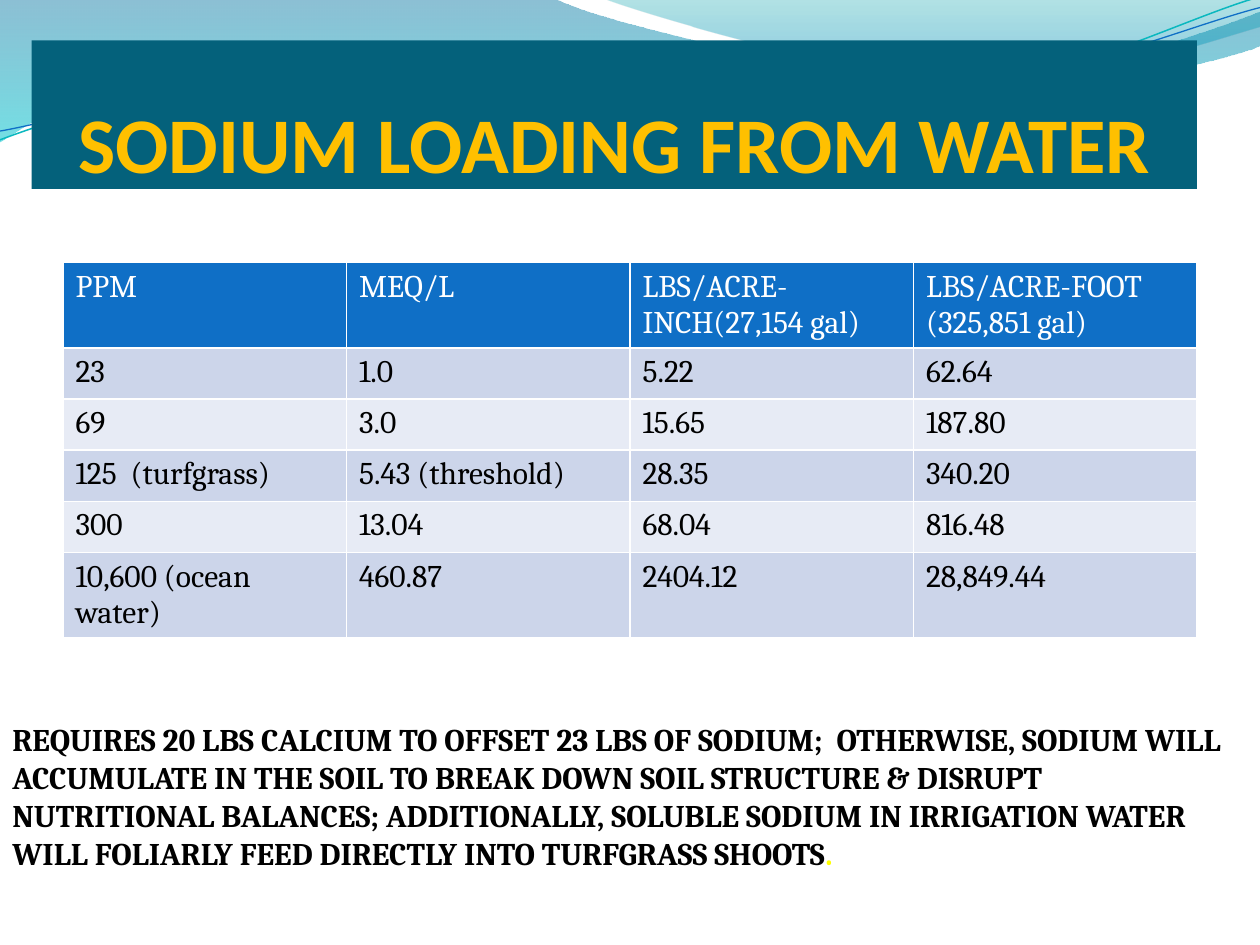
import math

import lxml.etree
import pptx
import pptx.dml.color
import pptx.enum.shapes
import pptx.enum.text
import pptx.oxml.ns
import pptx.util

RGBColor = pptx.dml.color.RGBColor
WHITE = RGBColor(255, 255, 255)
BLACK = RGBColor(0, 0, 0)
TEAL = RGBColor(0x04, 0x61, 0x7B)
GOLD = RGBColor(0xFF, 0xC0, 0x00)
YELLOW = RGBColor(0xFF, 0xFF, 0x00)
BLUE = RGBColor(0x0F, 0x6F, 0xC6)
AQUA = RGBColor(0x0A, 0xB8, 0xBF)
BAND_DARK = RGBColor(0xCC, 0xD5, 0xEA)
BAND_LIGHT = RGBColor(0xE7, 0xEB, 0xF5)
DEEP_BLUE = RGBColor(0x00, 0x74, 0xA1)
CYAN = RGBColor(0x00, 0xC6, 0xCF)
SEA_GREEN = RGBColor(0x00, 0xA1, 0xA9)
SEA_BLUE = RGBColor(0x00, 0x8B, 0xBF)

COLUMNS, ROWS = 100, 75
STRAND_TILT = 2.7

LOADING = [
    ["PPM", "MEQ/L", "LBS/ACRE-INCH(27,154 gal)", "LBS/ACRE-FOOT (325,851 gal)"],
    ["23", "1.0", "5.22", "62.64"],
    ["69", "3.0", "15.65", "187.80"],
    ["125  (turfgrass)", "5.43 (threshold)", "28.35", "340.20"],
    ["300", "13.04", "68.04", "816.48"],
    ["10,600 (ocean water)", "460.87", "2404.12", "28,849.44"],
]
ADVICE = (
    "REQUIRES 20 LBS CALCIUM TO OFFSET 23 LBS OF SODIUM;  OTHERWISE, SODIUM WILL "
    "ACCUMULATE IN THE SOIL TO BREAK DOWN SOIL STRUCTURE & DISRUPT NUTRITIONAL "
    "BALANCES; ADDITIONALLY, SOLUBLE SODIUM IN IRRIGATION WATER WILL FOLIARLY "
    "FEED DIRECTLY INTO TURFGRASS SHOOTS"
)


def turn(point, pivot, degrees):
    angle = math.radians(degrees)
    dx, dy = point[0] - pivot[0], point[1] - pivot[1]
    return (pivot[0] + dx * math.cos(angle) - dy * math.sin(angle),
            pivot[1] + dx * math.sin(angle) + dy * math.cos(angle))


class Deck:
    def __init__(self):
        self.prs = pptx.Presentation()
        self.prs.slide_width = pptx.util.Inches(10)
        self.prs.slide_height = pptx.util.Inches(7.5)
        self.s = self.prs.slides.add_slide(self.prs.slide_layouts[6])
        self.heading_font, self.body_font = "Calibri", "Cambria"

    def x(self, columns):
        return round(self.prs.slide_width * columns / COLUMNS)

    def y(self, rows):
        return round(self.prs.slide_height * rows / ROWS)

    def box(self, left, top, width, height):
        return self.x(left), self.y(top), self.x(width), self.y(height)

    def style(self, r, font, size, color, bold=False):
        r.font.name, r.font.size, r.font.bold = font, pptx.util.Pt(size), bold
        r.font.color.rgb = color

    def curve(self, segments, closed, pivot=(0, 0), tilt=0):
        points = [turn(pair, pivot, tilt)
                  for segment in segments for pair in zip(segment[::2], segment[1::2])]
        points = [(self.x(px), self.y(py)) for px, py in points]
        builder = self.s.shapes.build_freeform(*points[0])
        builder.add_line_segments(points[1:], close=closed)
        sp = builder.convert_to_shape()
        sp.shadow.inherit = False
        sp.rotation = -tilt
        steps = iter(list(sp._element.iter(pptx.oxml.ns.qn("a:lnTo"))))
        for segment in segments[1:]:
            step = next(steps)
            if len(segment) == 6:
                bezier = lxml.etree.Element(pptx.oxml.ns.qn("a:cubicBezTo"))
                step.addprevious(bezier)
                for part in (step, next(steps), next(steps)):
                    bezier.append(part[0])
                    part.getparent().remove(part)
        return sp

    def wave(self, segments, stops):
        sp = self.curve(segments, True)
        sp.line.fill.background()
        sp.fill.gradient()
        sp.fill.gradient_angle = 270
        for stop, (position, color, _) in zip(sp.fill.gradient_stops, stops):
            stop.position, stop.color.rgb = position, color
        colors = sp._element.spPr.iter(pptx.oxml.ns.qn("a:srgbClr"))
        for node, (_, _, opacity) in zip(colors, stops):
            alpha = lxml.etree.SubElement(node, pptx.oxml.ns.qn("a:alpha"))
            alpha.set("val", str(opacity * 1000))

    def strand(self, segments, pivot, color, width):
        sp = self.curve(segments, False, pivot, STRAND_TILT)
        sp.fill.background()
        sp.line.color.rgb = color
        sp.line.width = pptx.util.Pt(width)

    def banner(self, text, *place):
        sp = self.s.shapes.add_shape(pptx.enum.shapes.MSO_SHAPE.RECTANGLE, *self.box(*place))
        sp.shadow.inherit = False
        sp.fill.solid()
        sp.fill.fore_color.rgb = TEAL
        sp.line.fill.background()
        tf = sp.text_frame
        tf.text = text
        tf.word_wrap = True
        tf.vertical_anchor = pptx.enum.text.MSO_ANCHOR.BOTTOM
        tf.margin_left = tf.margin_right = tf.margin_bottom = 0
        p = tf.paragraphs[0]
        p.alignment = pptx.enum.text.PP_ALIGN.CENTER
        self.style(p.runs[0], self.heading_font, 45, GOLD, True)

    def table(self, rows, row_height, *place):
        frame = self.s.shapes.add_table(len(rows), len(rows[0]), *self.box(*place))
        for i, values in enumerate(rows):
            frame.table.rows[i].height = self.y(row_height)
            header = i == 0
            fill = BLUE if header else BAND_DARK if i % 2 else BAND_LIGHT
            for j, value in enumerate(values):
                cell = frame.table.cell(i, j)
                cell.text = value
                cell.fill.solid()
                cell.fill.fore_color.rgb = fill
                r = cell.text_frame.paragraphs[0].runs[0]
                self.style(r, self.body_font, 18, WHITE if header else BLACK)
        frame.height = self.y(place[3])

    def note(self, parts, *place):
        tf = self.s.shapes.add_textbox(*self.box(*place)).text_frame
        tf.word_wrap = True
        tf.auto_size = pptx.enum.text.MSO_AUTO_SIZE.SHAPE_TO_FIT_TEXT
        for text, color in parts:
            r = tf.paragraphs[0].add_run()
            r.text = text
            self.style(r, self.body_font, 18, color, True)


def main():
    deck = Deck()
    deck.wave([(0, 0), (44, -0.1), (47.6, 1.7, 66.4, 6.3, 75.8, 6.3),
               (85.3, 6.3, 95.8, 2.6, 100, 0.9), (100.1, 3.6),
               (98.3, 4.4, 87, 7.6, 74.6, 7.5), (62.2, 7.5, 38.2, 2.8, 25.7, 3.4),
               (12.9, 3.6, 4.6, 8.3, -0.1, 11.3), (0, 0)],
              [(0, DEEP_BLUE, 45), (1, CYAN, 55)])
    deck.wave([(47.9, -0.1), (50.9, 1.1, 68.2, 6.2, 76.9, 6.5),
               (85.6, 6.9, 96.1, 3.2, 100, 2.1), (100, 0), (47.9, -0.1)],
              [(0, SEA_GREEN, 30), (0.8, SEA_BLUE, 45)])
    deck.strand([(0, 11.1), (4.8, 9.3, 15.8, 5.7, 27.7, 5.2),
                 (39.5, 4.7, 59.3, 8.9, 71.3, 8), (83.3, 7.1, 93.8, 1.5, 99.8, -0.2)],
                (49.9, 5.75), AQUA, 0.85)
    deck.strand([(0, 10.4), (4.7, 9.6, 16.4, 6.1, 28.3, 5.6),
                 (40.3, 5.1, 59.7, 8.4, 71.7, 7.5), (83.6, 6.7, 94.1, 2.1, 100, 0.6)],
                (49.95, 5.9), BLUE, 0.75)
    deck.banner("SODIUM LOADING FROM WATER", 2.5, 3.2, 92.5, 11.8)
    deck.table(LOADING, 4.06, 5, 20.83, 90, 30.2)
    deck.note([(ADVICE, BLACK), (".", YELLOW)], 0, 56.66, 100, 13.1)
    deck.prs.save("out.pptx")


if __name__ == "__main__":
    main()
